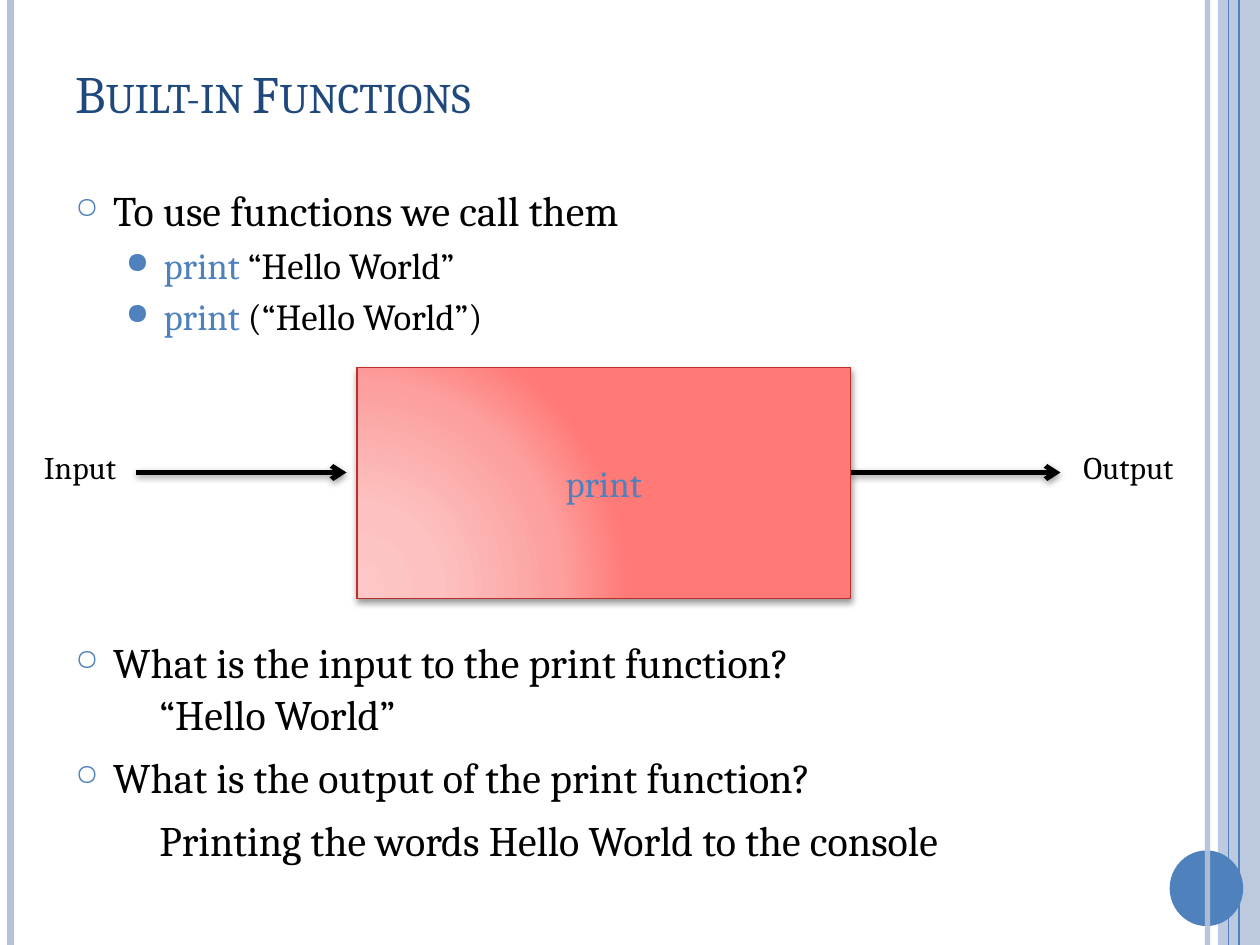
"""Build the slide on built-in functions, with print drawn as a box between input and output."""
import lxml.etree
import pptx
import pptx.dml.color
import pptx.enum.shapes
import pptx.enum.text
import pptx.util

A = "http://schemas.openxmlformats.org/drawingml/2006/main"
THEME = {
    "font": "Cambria", "title": "1F497D", "text": "000000", "accent": "4F81BD",
    "band": "B3C1DB", "box_line": "BD2D29",
    "box_stops": [(0, "FCC7C6"), (30, "FCC1C0"), (75, "FC9F9D"), (100, "FF7977")],
    "title_size": 30, "body_size": 24, "code_size": 21, "label_size": 18,
}
RGB = pptx.dml.color.RGBColor.from_string
SHAPE = pptx.enum.shapes.MSO_SHAPE
ANCHOR = pptx.enum.text.MSO_ANCHOR
ALIGN = pptx.enum.text.PP_ALIGN

prs = pptx.Presentation()
prs.slide_width, prs.slide_height = pptx.util.Inches(10), pptx.util.Inches(7.5)
COL, ROW = prs.slide_width / 120, prs.slide_height / 90
slide = prs.slides.add_slide(prs.slide_layouts[6])


def add_xml(parent, *parts):
    for part in parts:
        parent.append(lxml.etree.fromstring(part.replace(" ", f' xmlns:a="{A}" ', 1)))


def write(tf, paragraphs):
    tf.word_wrap = True
    for i, (runs, size, level, bullet, formats) in enumerate(paragraphs):
        p = tf.paragraphs[0] if i == 0 else tf.add_paragraph()
        for name, value in {"level": level, **formats}.items():
            setattr(p, name, value)
        if bullet:
            char, percent = bullet
            pPr = p._p.get_or_add_pPr()
            pPr.set("marL", str(int((3.6 + 4.8 * level) * COL)))
            pPr.set("indent", str(int(-3.6 * COL)))
            add_xml(pPr, f'<a:buClr ><a:srgbClr val="{THEME["accent"]}"/></a:buClr>',
                    f'<a:buSzPct val="{percent * 1000}"/>', f'<a:buChar char="{char}"/>')
        for text, color in runs:
            r = p.add_run()
            r.text = text
            for name, value in {"name": THEME["font"], "size": pptx.util.Pt(size)}.items():
                setattr(r.font, name, value)
            r.font.color.rgb = RGB(THEME[color])


lines = [
    (115, 0, 115, 90, "band", 3, 93, False),
    (1, 0, 1, 90, "band", 4.5, 100, False),
    (118, 0, 118, 90, "accent", 1.5, 100, False),
    (117, 0, 117, 90, "accent", 0.75, 100, False),
    (13, 45, 33, 45, "text", 2.75, 100, True),
    (81, 45, 101, 45, "text", 2.75, 100, True),
]
blocks = [
    (SHAPE.RECTANGLE, 116, 0, 4, 90, "band", 87),
    (SHAPE.OVAL, 111.4, 81, 7, 7.2, "accent", 100),
]
for kind, x, y, w, h, color, alpha in blocks:
    s = slide.shapes.add_shape(kind, int(x * COL), int(y * ROW), int(w * COL), int(h * ROW))
    s.shadow.inherit = False
    s.fill.solid()
    s.fill.fore_color.rgb = RGB(THEME[color])
    s.line.fill.background()
    if alpha < 100:
        add_xml(s._element.spPr.find(f".//{{{A}}}srgbClr"), f'<a:alpha val="{alpha * 1000}"/>')

for x1, y1, x2, y2, color, width, alpha, arrow in lines:
    s = slide.shapes.add_connector(pptx.enum.shapes.MSO_CONNECTOR.STRAIGHT, int(x1 * COL),
                                   int(y1 * ROW), int(x2 * COL), int(y2 * ROW))
    s.line.width = pptx.util.Pt(width)
    s.line.color.rgb = RGB(THEME[color])
    spPr = s._element.spPr
    if alpha < 100:
        add_xml(spPr.find(f".//{{{A}}}srgbClr"), f'<a:alpha val="{alpha * 1000}"/>')
    add_xml(spPr, "<a:effectLst />")
    if arrow:
        add_xml(spPr.find(f"{{{A}}}ln"), '<a:tailEnd type="arrow"/>')
        add_xml(spPr[-1], '<a:outerShdw blurRad="50800" dist="20320" dir="5400000" rotWithShape="0">'
                '<a:srgbClr val="000000"><a:alpha val="42000"/></a:srgbClr></a:outerShdw>')

s = slide.shapes.add_shape(SHAPE.RECTANGLE, int(34 * COL), int(35 * ROW), int(47 * COL), int(22 * ROW))
s.fill.gradient()
grad = s._element.spPr.find(f"{{{A}}}gradFill")
for child in list(grad):
    grad.remove(child)
stops = "".join(f'<a:gs pos="{pos * 1000}"><a:srgbClr val="{color}"/></a:gs>'
                for pos, color in THEME["box_stops"])
add_xml(grad, f"<a:gsLst >{stops}</a:gsLst>",
        '<a:path path="circle"><a:fillToRect l="5000" t="100000" r="120000" b="10000"/></a:path>')
s.line.color.rgb = RGB(THEME["box_line"])
s.line.width = pptx.util.Pt(1)
s.shadow.inherit = False
add_xml(s._element.spPr.find(f"{{{A}}}effectLst"),
        '<a:outerShdw blurRad="50800" dist="25400" dir="5400000" rotWithShape="0">'
        '<a:srgbClr val="000000"><a:alpha val="40000"/></a:srgbClr></a:outerShdw>')
s.text_frame.vertical_anchor = ANCHOR.MIDDLE
write(s.text_frame, [([("print", "accent")], THEME["code_size"], 0, None, {"alignment": ALIGN.CENTER})])

spaced = {"space_before": pptx.util.Pt(6)}
tight = {"space_before": pptx.util.Pt(0.2 * THEME["code_size"])}
ring, dot = ("○", 70), ("●", 80)
body, code, label = THEME["body_size"], THEME["code_size"], THEME["label_size"]
texts = [
    (6, 3.6, 104, 10.4, [([("Built-in Functions", "title")], THEME["title_size"], 0, None, {})]),
    (6, 17, 106, 16, [
        ([("To use functions we call them", "text")], body, 0, ring, spaced),
        ([("print", "accent"), (" “Hello World”", "text")], code, 1, dot, tight),
        ([("print", "accent"), (" (“Hello World”)", "text")], code, 1, dot, tight)]),
    (6, 60, 105, 9, [([("What is the input to the print function?", "text")], body, 0, ring, spaced)]),
    (3, 42.1, 16, 4.8, [([("Input", "text")], label, 0, None, {})]),
    (102, 42.1, 16, 4.8, [([("Output", "text")], label, 0, None, {})]),
    (14, 65, 42, 9, [([("“Hello World”", "text")], body, 0, None, spaced)]),
    (6, 71, 105, 9, [([("What is the output of the print function?", "text")], body, 0, ring, spaced)]),
    (14, 77, 88, 9, [([("Printing the words Hello World to the console", "text")], body, 0, None, spaced)]),
]
for x, y, w, h, paragraphs in texts:
    s = slide.shapes.add_textbox(int(x * COL), int(y * ROW), int(w * COL), int(h * ROW))
    write(s.text_frame, paragraphs)
    if paragraphs[0][1] == THEME["title_size"]:
        s.text_frame.vertical_anchor = ANCHOR.MIDDLE
        s.text_frame.paragraphs[0].runs[0]._r.get_or_add_rPr().set("cap", "small")

prs.save("out.pptx")
